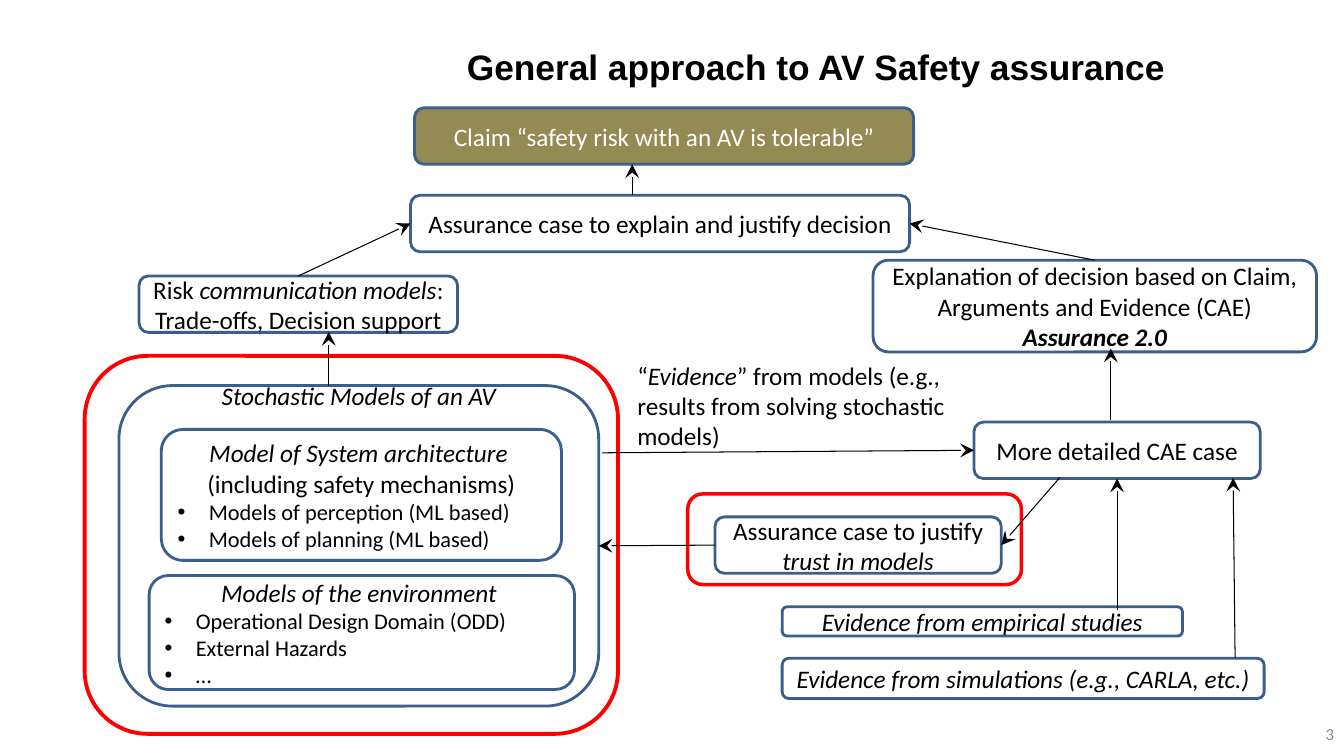
"""Build the slide on the general approach to AV safety assurance."""
import pptx
import pptx.dml.color
import pptx.enum.shapes
import pptx.enum.text
import pptx.oxml
import pptx.oxml.ns
import pptx.util

THEME = {
    "blue": "3A5F8C", "red": "FF0000", "olive": "948A54",
    "black": "000000", "white": "FFFFFF", "grey": "8C8C8C",
    "title": 25.2, "body": 18, "bullet": 16, "number": 12,
    "body_font": "Calibri", "title_font": "Arial",
}
ALIGN = pptx.enum.text.PP_ALIGN
ANCHOR = pptx.enum.text.MSO_ANCHOR
ROUNDED = pptx.enum.shapes.MSO_SHAPE.ROUNDED_RECTANGLE
STRAIGHT = pptx.enum.shapes.MSO_CONNECTOR.STRAIGHT
TOP, LEFT, BOTTOM, RIGHT = range(4)

presentation = pptx.Presentation()
presentation.slide_width = pptx.util.Inches(13.33)
presentation.slide_height = pptx.util.Inches(7.5)
slide = presentation.slides.add_slide(presentation.slide_layouts[6])
column = presentation.slide_width / 100
row = presentation.slide_height / 100


def color(name):
    return pptx.dml.color.RGBColor.from_string(THEME[name])


def write(shape, paragraphs, ink="black", size="body", font="body_font",
          align=ALIGN.CENTER, anchor=ANCHOR.MIDDLE):
    frame = shape.text_frame
    frame.word_wrap = True
    frame.vertical_anchor = anchor
    for index, runs in enumerate(paragraphs):
        paragraph = frame.add_paragraph() if index else frame.paragraphs[0]
        paragraph.alignment = align
        bulleted = isinstance(runs, str)
        if bulleted:
            paragraph.alignment = ALIGN.LEFT
            properties = paragraph._p.get_or_add_pPr()
            indent = pptx.util.Inches(0.31)
            properties.set("marL", str(indent))
            properties.set("indent", str(-indent))
            properties.append(pptx.oxml.parse_xml(
                f'<a:buFont {pptx.oxml.ns.nsdecls("a")} typeface="Arial"/>'))
            properties.append(pptx.oxml.parse_xml(
                f'<a:buChar {pptx.oxml.ns.nsdecls("a")} char="•"/>'))
            runs = [(runs, "")]
        for text, style in runs:
            run = paragraph.add_run()
            run.text = text
            run.font.name = THEME[font]
            run.font.size = pptx.util.Pt(THEME["bullet" if bulleted else size])
            run.font.bold = "b" in style
            run.font.italic = "i" in style
            run.font.color.rgb = color(ink)


boxes = [
    ("outer frame", (6.3, 47.07, 39.68, 50), "red", 2.75, []),
    ("claim", (30.85, 14.25, 37.13, 7.47), "blue", 2,
     [[("Claim “safety risk with an AV is tolerable”", "")]]),
    ("decision", (30.55, 25.83, 37.13, 7.47), "blue", 2,
     [[("Assurance case to explain and justify decision", "")]]),
    ("risk", (10.35, 36.5, 23.7, 7.47), "blue", 2,
     [[("Risk ", ""), ("communication models", "i"), (": ", "")],
      [("Trade-offs, Decision support", "")]]),
    ("explanation", (64.96, 34.42, 33, 12.13), "blue", 2,
     [[("Explanation of decision based on Claim, Arguments and Evidence (CAE)", "")],
      [("Assurance 2.0", "bi")]]),
    ("detailed case", (72.47, 55.83, 21.3, 7.47), "blue", 2,
     [[("More detailed CAE case", "")]]),
    ("architecture", (12, 56.8, 29.78, 17.33), "blue", 2,
     [[("Model of System architecture ", "i")],
      [("(including safety mechanisms)", "")],
      "Models of perception (ML based)",
      "Models of planning (ML based)"]),
    ("environment", (11.1, 76.13, 31.65, 15.07), "blue", 2,
     [[("Models of the environment ", "i")],
      "Operational Design Domain (ODD)", "External Hazards", "…"]),
    ("stochastic models", (8.85, 51, 35.7, 42.4), "blue", 2, []),
    ("trust", (53.2, 68.37, 21.3, 7.47), "blue", 2,
     [[("Assurance case to justify ", ""), ("trust in models", "i")]]),
    ("empirical studies", (58.2, 80.27, 29.78, 3.87), "blue", 2,
     [[("Evidence from empirical studies", "i")]]),
    ("simulations", (58.2, 87.07, 35.86, 5.33), "blue", 2,
     [[("Evidence from simulations (e.g., CARLA, etc.)", "i")]]),
    ("trust frame", (51.17, 65.33, 24.83, 12), "red", 2.5, []),
]
shapes = {}
for name, (left, top, width, height), outline, weight, paragraphs in boxes:
    shape = slide.shapes.add_shape(
        ROUNDED, round(left * column), round(top * row),
        round(width * column), round(height * row))
    shape.shadow.inherit = False
    shape.line.color.rgb = color(outline)
    shape.line.width = pptx.util.Pt(weight)
    shape.fill.background()
    if name == "claim":
        shape.fill.solid()
        shape.fill.fore_color.rgb = color("olive")
    write(shape, paragraphs, "white" if name == "claim" else "black")
    shapes[name] = shape

labels = [
    ((34, 2, 56.2, 13.6), [[("General approach to AV Safety assurance", "b")]],
     ("black", "title", "title_font", ALIGN.LEFT, ANCHOR.MIDDLE)),
    ((46.68, 47, 24.76, 13.47),
     [[("“", ""), ("Evidence", "i"),
       ("” from models (e.g., results from solving stochastic models)", "")]],
     ("black", "body", "body_font", ALIGN.LEFT, ANCHOR.TOP)),
    ((8.85, 49.65, 35.7, 5.4), [[("Stochastic Models of an AV", "i")]],
     ("black", "body", "body_font", ALIGN.CENTER, ANCHOR.TOP)),
    ((82.5, 94.4, 17.5, 5.3), [[("3", "")]],
     ("grey", "number", "body_font", ALIGN.RIGHT, ANCHOR.MIDDLE)),
]
for (left, top, width, height), paragraphs, look in labels:
    label = slide.shapes.add_textbox(
        round(left * column), round(top * row),
        round(width * column), round(height * row))
    write(label, paragraphs, *look)

arrows = [
    (("explanation", TOP), ("decision", RIGHT)),
    ((82.65, 55.6), (82.65, 46.1)),
    (("trust", LEFT), ("stochastic models", RIGHT)),
    ((44.8, 59.9), ("detailed case", LEFT)),
    (("risk", TOP), ("decision", LEFT)),
    ((47.04, 25.83), (47.04, 21.72)),
    ((78.84, 63.2), ("trust", RIGHT)),
    ((83.12, 80.67), ("detailed case", BOTTOM)),
    ((91.9, 87.07), (91.75, 63.2)),
    ((24.46, 51), (24.46, 43.9)),
]
for start, end in arrows:
    arrow = slide.shapes.add_connector(STRAIGHT, 0, 0, 0, 0)
    if start[0] in shapes:
        arrow.begin_connect(shapes[start[0]], start[1])
    else:
        arrow.begin_x, arrow.begin_y = round(start[0] * column), round(start[1] * row)
    if end[0] in shapes:
        arrow.end_connect(shapes[end[0]], end[1])
    else:
        arrow.end_x, arrow.end_y = round(end[0] * column), round(end[1] * row)
    arrow.line.color.rgb = color("black")
    arrow.line.width = pptx.util.Pt(0.75)
    arrow.line._get_or_add_ln().append(pptx.oxml.parse_xml(
        f'<a:tailEnd {pptx.oxml.ns.nsdecls("a")} type="stealth" w="lg" len="lg"/>'))
    arrow._element.spPr.append(pptx.oxml.parse_xml(
        f'<a:effectLst {pptx.oxml.ns.nsdecls("a")}/>'))

presentation.save("out.pptx")
